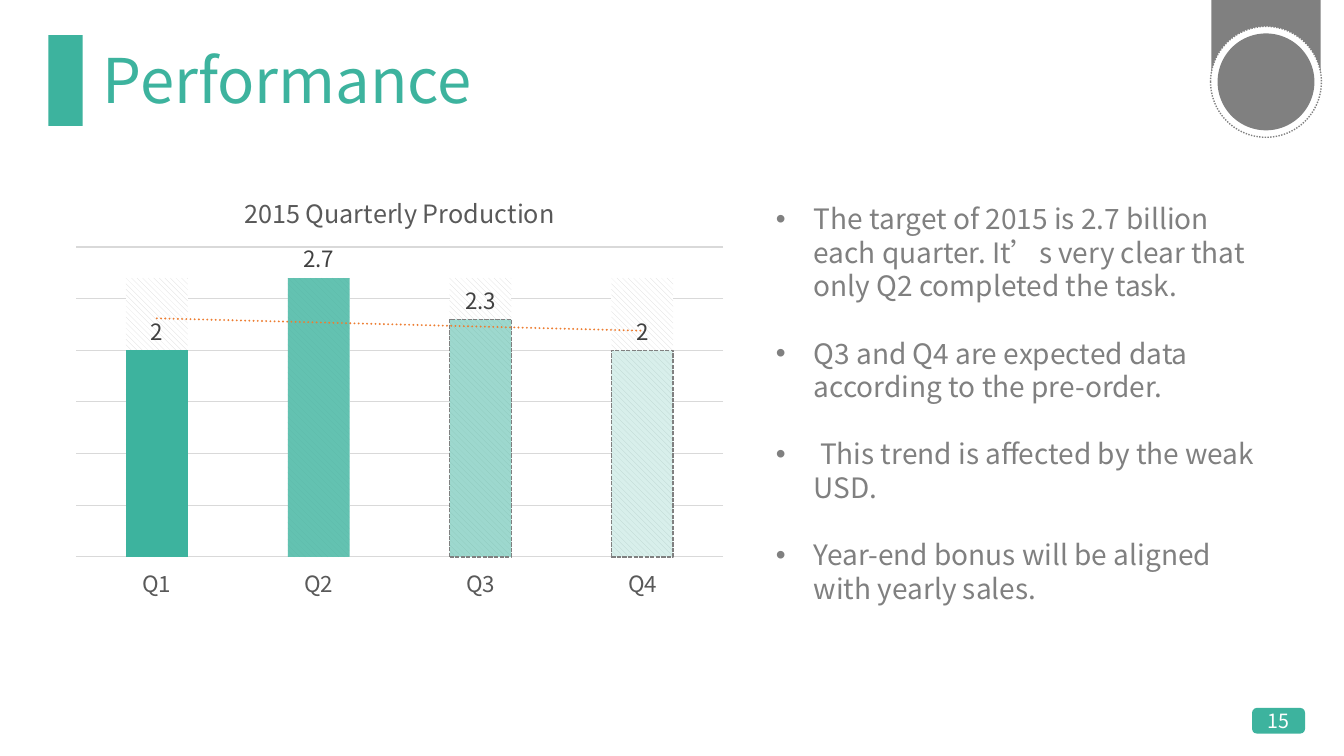
from lxml import etree
from pptx import Presentation
from pptx.chart.data import CategoryChartData
from pptx.dml.color import RGBColor
from pptx.enum.chart import XL_CHART_TYPE, XL_LABEL_POSITION, XL_TICK_LABEL_POSITION, XL_TICK_MARK
from pptx.enum.dml import MSO_LINE, MSO_PATTERN
from pptx.enum.shapes import MSO_SHAPE
from pptx.enum.text import MSO_ANCHOR, PP_ALIGN
from pptx.oxml import parse_xml
from pptx.oxml.ns import nsdecls, qn
from pptx.util import Pt

RECTANGLE, ROUNDED, OVAL = MSO_SHAPE.RECTANGLE, MSO_SHAPE.ROUNDED_RECTANGLE, MSO_SHAPE.OVAL
MIDDLE, CENTER, LEFT = MSO_ANCHOR.MIDDLE, PP_ALIGN.CENTER, PP_ALIGN.LEFT
NO_TICK = XL_TICK_MARK.NONE
COLORS = {"green": "3DB39E", "gray": "808080", "white": "FFFFFF", "grid": "D9D9D9",
          "axis": "595959", "label": "404040", "orange": "ED7D31"}
FONT = "Noto Sans CJK SC"
QUARTERS = ("Q1", "Q2", "Q3", "Q4")
TARGET = (2.7,) * 4
PRODUCTION = (2, 2.7, 2.3, 2)
BAR_OPACITY = (100, 80, 50, 20)
EXPECTED = ("Q3", "Q4")
REMARKS = (
    "The target of 2015 is 2.7 billion each quarter. It’s very clear that only Q2 completed the task.",
    "Q3 and Q4 are expected data according to the pre-order.",
    " This trend is affected by the weak USD.",
    "Year-end bonus will be aligned with yearly sales.",
)


def rgb(name):
    return RGBColor.from_string(COLORS[name])


def set_font(font, size, color):
    font.name, font.size, font.bold = FONT, Pt(size), False
    font.color.rgb = rgb(color)


def add_block(slide, kind, left, top, width, height, fill, line=None):
    shape = slide.shapes.add_shape(kind, Pt(left), Pt(top), Pt(width), Pt(height))
    shape.shadow.inherit = False
    shape.fill.solid()
    shape.fill.fore_color.rgb = rgb(fill)
    if line:
        shape.line.color.rgb = rgb(line)
        shape.line.width = Pt(1)
    else:
        shape.line.fill.background()
    return shape


def add_heading(slide, left, top, width, height):
    add_block(slide, RECTANGLE, left, top, 24.5, height, "green")
    title = slide.shapes.title
    title.left, title.top = Pt(left + 31.7), Pt(top + 3.6)
    title.width, title.height = Pt(width - 31.7), Pt(height - 3.6)
    frame = title.text_frame
    frame.text = "Performance"
    frame.vertical_anchor = MIDDLE
    paragraph = frame.paragraphs[0]
    paragraph.alignment = LEFT
    paragraph.line_spacing = 0.9
    set_font(paragraph.font, 44, "green")


def add_badge(slide, left, top, diameter):
    add_block(slide, RECTANGLE, left + 0.5, -0.5, diameter - 1, 65.5, "gray")
    ring = add_block(slide, OVAL, left, top, diameter, diameter, "white", "gray")
    ring.line.dash_style = MSO_LINE.ROUND_DOT
    disc = 69.2
    inset = (diameter - disc) / 2
    add_block(slide, OVAL, left + inset, top + inset, disc, disc, "gray")


def add_page_number(slide, left, top, width, height):
    pill = add_block(slide, ROUNDED, left, top, width, height, "green", "green")
    frame = pill.text_frame
    frame.margin_left = frame.margin_right = frame.margin_top = frame.margin_bottom = 0
    frame.word_wrap = False
    frame.vertical_anchor = MIDDLE
    paragraph = frame.paragraphs[0]
    paragraph.text = "15"
    paragraph.alignment = CENTER
    set_font(paragraph.font, 14, "white")


def add_trend_line(series):
    trend = parse_xml(
        f'<c:trendline {nsdecls("c", "a")}><c:spPr><a:ln w="{Pt(1.5)}" cap="rnd"><a:solidFill>'
        f'<a:srgbClr val="{COLORS["orange"]}"/></a:solidFill><a:prstDash val="sysDot"/></a:ln></c:spPr>'
        '<c:trendlineType val="linear"/><c:dispRSqr val="0"/><c:dispEq val="0"/></c:trendline>')
    series._element.find(qn("c:cat")).addprevious(trend)


def format_axes(chart):
    values = chart.value_axis
    values.minimum_scale, values.maximum_scale, values.major_unit = 0, 3, 0.5
    values.major_gridlines.format.line.color.rgb = rgb("grid")
    values.major_gridlines.format.line.width = Pt(0.75)
    values.visible = False
    categories = chart.category_axis
    categories.major_tick_mark = categories.minor_tick_mark = NO_TICK
    categories.tick_label_position = XL_TICK_LABEL_POSITION.LOW
    categories.format.line.color.rgb = rgb("grid")
    categories.format.line.width = Pt(0.75)
    set_font(categories.tick_labels.font, 16, "axis")


def format_bars(plot):
    plot.gap_width, plot.overlap, plot.vary_by_categories = 162, 100, False
    target, production = plot.series
    target.invert_if_negative = production.invert_if_negative = False
    target.format.fill.patterned()
    target.format.fill.pattern = MSO_PATTERN.WIDE_DOWNWARD_DIAGONAL
    target.format.fill.fore_color.rgb = rgb("grid")
    target.format.fill.back_color.rgb = rgb("white")
    production.format.fill.solid()
    production.format.fill.fore_color.rgb = rgb("orange")
    for index, (quarter, opacity) in enumerate(zip(QUARTERS, BAR_OPACITY)):
        bar = production.points[index].format
        bar.fill.solid()
        bar.fill.fore_color.rgb = rgb("green")
        color = bar.fill._xPr.find(f".//{qn('a:srgbClr')}")
        etree.SubElement(color, qn("a:alpha"), val=str(opacity * 1000))
        if quarter in EXPECTED:
            bar.line.color.rgb = rgb("gray")
            bar.line.width = Pt(1)
            bar.line.dash_style = MSO_LINE.SQUARE_DOT
    labels = production.data_labels
    labels.show_value = True
    labels.position = XL_LABEL_POSITION.OUTSIDE_END
    set_font(labels.font, 16, "label")
    add_trend_line(production)


def add_production_chart(slide, left, top, width, height):
    data = CategoryChartData()
    data.categories = QUARTERS
    data.add_series("Series 1", TARGET)
    data.add_series("Series 2", PRODUCTION)
    chart = slide.shapes.add_chart(XL_CHART_TYPE.COLUMN_CLUSTERED, Pt(left), Pt(top),
                                   Pt(width), Pt(height), data).chart
    chart.has_legend = False
    chart.font.name, chart.font.size = "Calibri", Pt(10)
    chart.has_title = True
    frame = chart.chart_title.text_frame
    frame.text = "2015 Quarterly Production"
    set_font(frame.paragraphs[0].font, 18, "axis")
    chart.chart_title.include_in_layout = False
    format_axes(chart)
    format_bars(chart.plots[0])
    # Fixed plot area below the chart title
    plot_area = chart._chartSpace.chart.plotArea
    for old_layout in plot_area.findall(qn("c:layout")):
        plot_area.remove(old_layout)
    plot_area.insert(0, parse_xml(
        f'<c:layout {nsdecls("c")}><c:manualLayout><c:layoutTarget val="inner"/>'
        '<c:xMode val="edge"/><c:yMode val="edge"/><c:x val="0.02"/><c:y val="0.174"/>'
        '<c:w val="0.96"/><c:h val="0.722"/></c:manualLayout></c:layout>'))


def add_remarks(slide, left, top, width, height):
    frame = slide.shapes.add_textbox(Pt(left), Pt(top), Pt(width), Pt(height)).text_frame
    frame.word_wrap = True
    for index, remark in enumerate(REMARKS):
        paragraph = frame.paragraphs[0] if index == 0 else frame.add_paragraph()
        paragraph.text = remark
        paragraph.line_spacing = Pt(24)
        if index:
            paragraph.space_before = Pt(24)
        properties = paragraph._p.get_or_add_pPr()
        properties.set("marL", str(Pt(27)))
        properties.set("indent", str(-Pt(27)))
        etree.SubElement(properties, qn("a:buFont"), typeface="Arial")
        etree.SubElement(properties, qn("a:buChar"), char="•")
        set_font(paragraph.font, 20, "gray")


def main():
    presentation = Presentation()
    presentation.slide_width, presentation.slide_height = Pt(960), Pt(540)
    slide = presentation.slides.add_slide(presentation.slide_layouts[5])
    add_heading(slide, 34.5, 25.2, 860, 64.8)
    add_badge(slide, 864.7, 18.9, 79.2)
    add_page_number(slide, 894.9, 506.2, 36.8, 17.3)
    add_production_chart(slide, 44.6, 123.1, 481.7, 306.7)
    add_remarks(slide, 547.2, 140.5, 357.1, 298.1)
    presentation.save("out.pptx")


if __name__ == "__main__":
    main()
